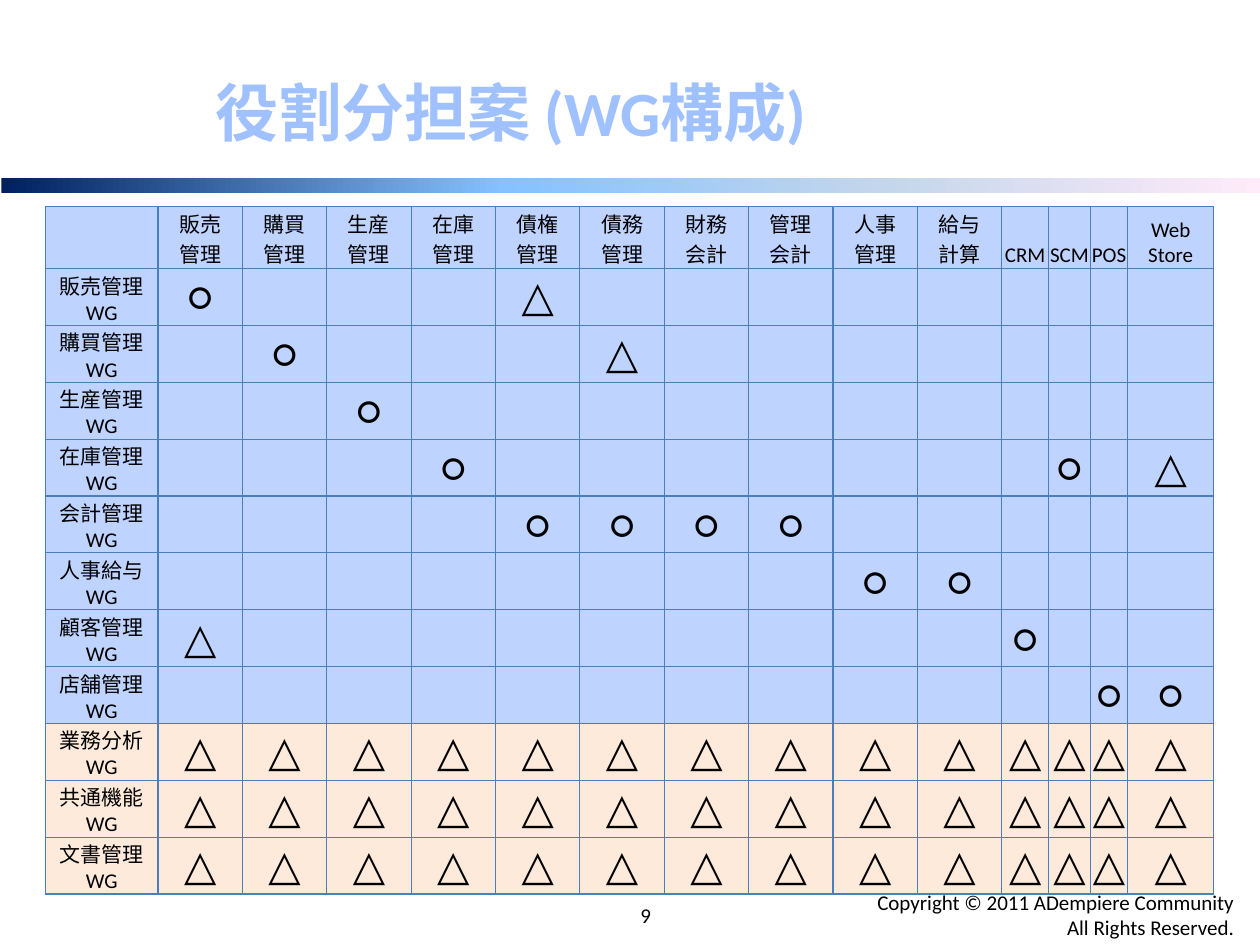
from pptx import Presentation
from pptx.dml.color import RGBColor
from pptx.enum.shapes import MSO_SHAPE
from pptx.enum.text import MSO_ANCHOR, MSO_AUTO_SIZE, PP_ALIGN
from pptx.oxml import parse_xml
from pptx.oxml.ns import nsdecls, qn
from pptx.util import Pt

RECT = MSO_SHAPE.RECTANGLE
MIDDLE, BOTTOM = MSO_ANCHOR.MIDDLE, MSO_ANCHOR.BOTTOM
LEFT, CENTER, RIGHT = PP_ALIGN.LEFT, PP_ALIGN.CENTER, PP_ALIGN.RIGHT
NO_AUTOFIT = MSO_AUTO_SIZE.NONE

FONT = "Calibri"
COLORS = {"text": "000000", "cell": "BFD3FF", "shared": "FDEADA",
          "border": "4B7EBC", "outline": "467AB8"}
TITLE_STOPS = [(0, "BFD3F9"), (9, "A0C1FF"), (50, "003D85"),
               (79, "A0C1FF"), (100, "BFD3F9")]
BAR_STOPS = [(0, "002060"), (40, "85C2FF"), (70, "C4D6EB"), (100, "FFEBFA")]

# Table content: a newline starts a paragraph, a dot is an empty cell
HEADERS = ["販売\n管理", "購買\n管理", "生産\n管理", "在庫\n管理", "債権\n管理",
           "債務\n管理", "財務\n会計", "管理\n会計", "人事\n管理", "給与\n計算",
           "CRM", "SCM", "POS", "Web Store"]
GROUPS = [
    ("販売管理WG", "○...△........."),
    ("購買管理WG", ".○...△........"),
    ("生産管理WG", "..○..........."),
    ("在庫管理WG", "...○.......○.△"),
    ("会計管理WG", "....○○○○......"),
    ("人事給与WG", "........○○...."),
    ("顧客管理WG", "△.........○..."),
    ("店舗管理WG", "............○○"),
]
SHARED_GROUPS = [(name + "\nWG", "△" * len(HEADERS))
                 for name in ("業務分析", "共通機能", "文書管理")]
ALL_GROUPS = GROUPS + SHARED_GROUPS
COL_WIDTHS = [64.3] + [48.24] * 10 + [26.8, 23.8, 21.5, 48.9]
ROW_HEIGHTS = [35.5] + [32.5] * len(ALL_GROUPS)


def gradient(stops, angle):
    gs = "".join(f'<a:gs pos="{pos * 1000}"><a:srgbClr val="{color}"/></a:gs>'
                 for pos, color in stops)
    return parse_xml(f'<a:gradFill {nsdecls("a")} rotWithShape="1"><a:gsLst>{gs}'
                     f'</a:gsLst><a:lin ang="{angle * 60000}" scaled="0"/></a:gradFill>')


def solid_line(tag, color, width):
    return parse_xml(f'<a:{tag} {nsdecls("a")} w="{Pt(width)}"><a:solidFill>'
                     f'<a:srgbClr val="{color}"/></a:solidFill></a:{tag}>')


def write(tf, text, size, align):
    for i, line in enumerate(text.split("\n")):
        p = tf.paragraphs[0] if i == 0 else tf.add_paragraph()
        p.alignment = align
        r = p.add_run()
        r.text = line
        r.font.name, r.font.size = FONT, Pt(size)
        r.font.color.rgb = RGBColor.from_string(COLORS["text"])


def add_bar(s, x, y, w, h):
    sp = s.shapes.add_shape(RECT, Pt(x), Pt(y), Pt(w), Pt(h))
    sp.shadow.inherit = False
    sp.line.fill.background()
    sp.fill.background()
    no_fill = sp._element.spPr.find(qn("a:noFill"))
    no_fill.getparent().replace(no_fill, gradient(BAR_STOPS, 0))


def add_text(s, x, y, w, h, text, align):
    tf = s.shapes.add_textbox(Pt(x), Pt(y), Pt(w), Pt(h)).text_frame
    tf.word_wrap = True
    tf.vertical_anchor = MIDDLE
    write(tf, text, 12, align)


def set_title(s, x, y, w, h, text):
    sp = s.shapes.title
    sp.left, sp.top, sp.width, sp.height = Pt(x), Pt(y), Pt(w), Pt(h)
    tf = sp.text_frame
    tf.auto_size = NO_AUTOFIT
    tf.vertical_anchor = MIDDLE
    p = tf.paragraphs[0]
    p.alignment = LEFT
    r = p.add_run()
    r.text = text
    r.font.name, r.font.size, r.font.bold = FONT, Pt(36), True
    # Outline and gradient come first among the run properties
    rPr = r.font._element
    rPr.insert(0, solid_line("ln", COLORS["outline"], 0.83))
    rPr.insert(1, gradient(TITLE_STOPS, 90))


def format_cell(cell, fill):
    tcPr = cell._tc.get_or_add_tcPr()
    for side in ("lnL", "lnR", "lnT", "lnB"):
        tcPr.append(solid_line(side, COLORS["border"], 0.75))
    cell.fill.solid()
    cell.fill.fore_color.rgb = RGBColor.from_string(fill)


def fill_cell(cell, text, size, anchor):
    cell.margin_left = cell.margin_right = cell.margin_top = Pt(0.7)
    cell.margin_bottom = 0
    cell.vertical_anchor = anchor
    write(cell.text_frame, text, size, CENTER)


def add_role_table(s, x, y):
    table = s.shapes.add_table(len(ROW_HEIGHTS), len(COL_WIDTHS), Pt(x), Pt(y),
                               Pt(sum(COL_WIDTHS)), Pt(sum(ROW_HEIGHTS))).table
    table.first_row = table.horz_banding = False
    for col, width in zip(table.columns, COL_WIDTHS):
        col.width = Pt(width)
    for i, (row, height) in enumerate(zip(table.rows, ROW_HEIGHTS)):
        row.height = Pt(height)
        fill = COLORS["shared" if i > len(GROUPS) else "cell"]
        for cell in row.cells:
            format_cell(cell, fill)

    for j, header in enumerate(HEADERS, 1):
        fill_cell(table.cell(0, j), header, 12, BOTTOM)
    for i, (name, marks) in enumerate(ALL_GROUPS, 1):
        fill_cell(table.cell(i, 0), name, 12, BOTTOM)
        for j, mark in enumerate(marks, 1):
            if mark != ".":
                fill_cell(table.cell(i, j), mark, 24, MIDDLE)


def main():
    prs = Presentation()
    prs.slide_width, prs.slide_height = Pt(720), Pt(540)
    s = prs.slides.add_slide(prs.slide_layouts[5])

    # Heading and divider
    add_bar(s, 0.8, 101.6, 719.2, 8.6)
    set_title(s, 116, 18.7, 568, 90, "役割分担案 (WG構成)")

    # Footer
    add_text(s, 487, 508.3, 225.4, 28.8,
             "Copyright © 2011 ADempiere Community\nAll Rights Reserved.", RIGHT)
    add_text(s, 285, 508.6, 168, 28.8, "9", CENTER)

    # Working groups against business areas
    add_role_table(s, 26, 118)
    prs.save("out.pptx")


if __name__ == "__main__":
    main()
